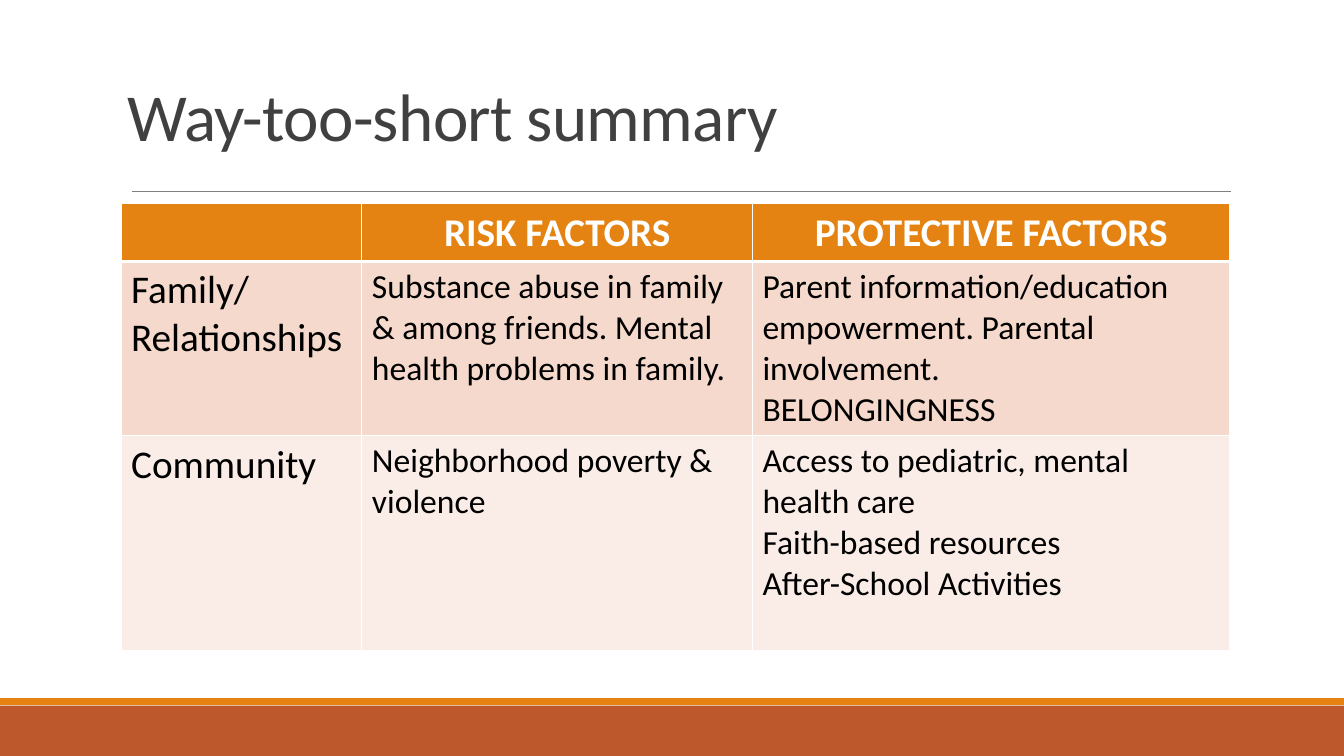
import pptx
import pptx.util
import pptx.dml.color
import pptx.enum.shapes
import pptx.enum.text
import pptx.oxml
import pptx.oxml.ns

Pt = pptx.util.Pt
ALIGN = pptx.enum.text.PP_ALIGN
NAMESPACE = pptx.oxml.ns.nsdecls("a")
COLORS = {
    "white": "FFFFFF", "black": "000000", "title": "404040", "rule": "808080",
    "orange": "E48312", "rust": "BD582C", "band dark": "F5D9CC", "band light": "FAEDE7",
}


class SummarySlide:
    """Draws the elements of one slide in a shared style, with lengths in points."""

    font_name = "Calibri"

    def __init__(self, presentation):
        self.slide = presentation.slides.add_slide(presentation.slide_layouts[6])

    def color(self, name):
        return pptx.dml.color.RGBColor.from_string(COLORS[name])

    def add_text(self, frame, text, color, align=ALIGN.LEFT, line_spacing=None, **font):
        frame.word_wrap = True
        for index, line in enumerate(text.split("\n")):
            paragraph = frame.add_paragraph() if index else frame.paragraphs[0]
            paragraph.alignment = align
            paragraph.line_spacing = line_spacing
            run = paragraph.add_run()
            run.text = line
            run.font.color.rgb = self.color(color)
            for name, value in {"name": self.font_name, **font}.items():
                setattr(run.font, name, value)

    def bar(self, left, top, width, height, color):
        shape = self.slide.shapes.add_shape(
            pptx.enum.shapes.MSO_SHAPE.RECTANGLE, Pt(left), Pt(top), Pt(width), Pt(height))
        shape.shadow.inherit = False
        shape.fill.solid()
        shape.fill.fore_color.rgb = self.color(color)
        shape.line.fill.background()

    def rule(self, left, right, top, color):
        connector = self.slide.shapes.add_connector(
            pptx.enum.shapes.MSO_CONNECTOR.STRAIGHT, Pt(left), Pt(top), Pt(right), Pt(top))
        connector.line.color.rgb = self.color(color)
        connector.line.width = Pt(0.5)
        connector._element.spPr.append(pptx.oxml.parse_xml(f"<a:effectLst {NAMESPACE}/>"))

    def title(self, left, top, width, height, text):
        shape = self.slide.shapes.add_textbox(Pt(left), Pt(top), Pt(width), Pt(height))
        shape.text_frame.vertical_anchor = pptx.enum.text.MSO_ANCHOR.BOTTOM
        self.add_text(shape.text_frame, text, "title", line_spacing=0.85, size=Pt(48))
        for run in shape.text_frame.paragraphs[0].runs:
            run._r.get_or_add_rPr().set("spc", "-50")

    def borders(self, cell, bottom):
        for side, width in {"L": 1, "R": 1, "T": 1, "B": bottom}.items():
            cell._tc.get_or_add_tcPr().append(pptx.oxml.parse_xml(
                f'<a:ln{side} {NAMESPACE} w="{int(Pt(width))}"><a:solidFill>'
                f'<a:srgbClr val="{COLORS["white"]}"/></a:solidFill></a:ln{side}>'))

    def table(self, left, top, widths, heights, fills, rows):
        table = self.slide.shapes.add_table(
            len(heights), len(widths), Pt(left), Pt(top),
            Pt(sum(widths)), Pt(sum(heights))).table
        for column, width in zip(table.columns, widths):
            column.width = Pt(width)
        for row_index, (row, height) in enumerate(zip(table.rows, heights)):
            row.height = Pt(height)
            header = row_index == 0
            for column_index, cell in enumerate(row.cells):
                self.borders(cell, 3 if header else 1)
                cell.fill.solid()
                cell.fill.fore_color.rgb = self.color(fills[row_index])
                text = rows[row_index][column_index]
                if text:
                    self.add_text(
                        cell.text_frame, text, "white" if header else "black",
                        ALIGN.CENTER if header else ALIGN.LEFT, bold=header,
                        size=Pt(28 if header or column_index == 0 else 24))


def main():
    presentation = pptx.Presentation()
    presentation.slide_width, presentation.slide_height = Pt(960), Pt(540)
    summary = SummarySlide(presentation)
    summary.bar(0, 504, 960, 36, "rust")
    summary.bar(0, 498.75, 960, 5, "orange")
    summary.rule(94, 879, 136.5, "rule")
    summary.title(84, 0, 792, 114.5, "Way-too-short summary")
    summary.table(
        86.5, 145.5, [172, 279, 341], [41.4, 124.4, 153.6],
        ["orange", "band dark", "band light"],
        [
            ["", "RISK FACTORS", "PROTECTIVE FACTORS"],
            ["Family/ Relationships",
             "Substance abuse in family & among friends. Mental health problems in family.",
             "Parent information/education empowerment. Parental involvement.\nBELONGINGNESS"],
            ["Community",
             "Neighborhood poverty & violence",
             "Access to pediatric, mental health care\n"
             "Faith-based resources\nAfter-School Activities"],
        ])
    presentation.save("out.pptx")


if __name__ == "__main__":
    main()
